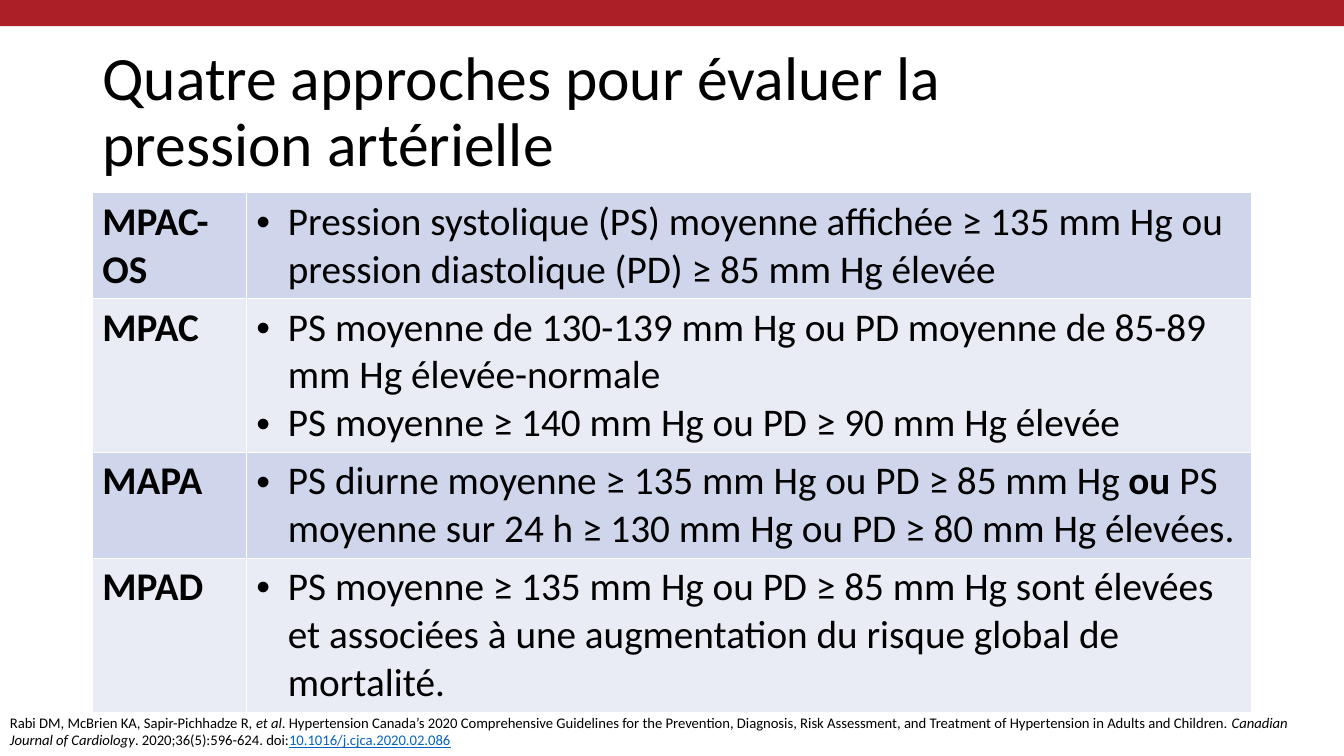
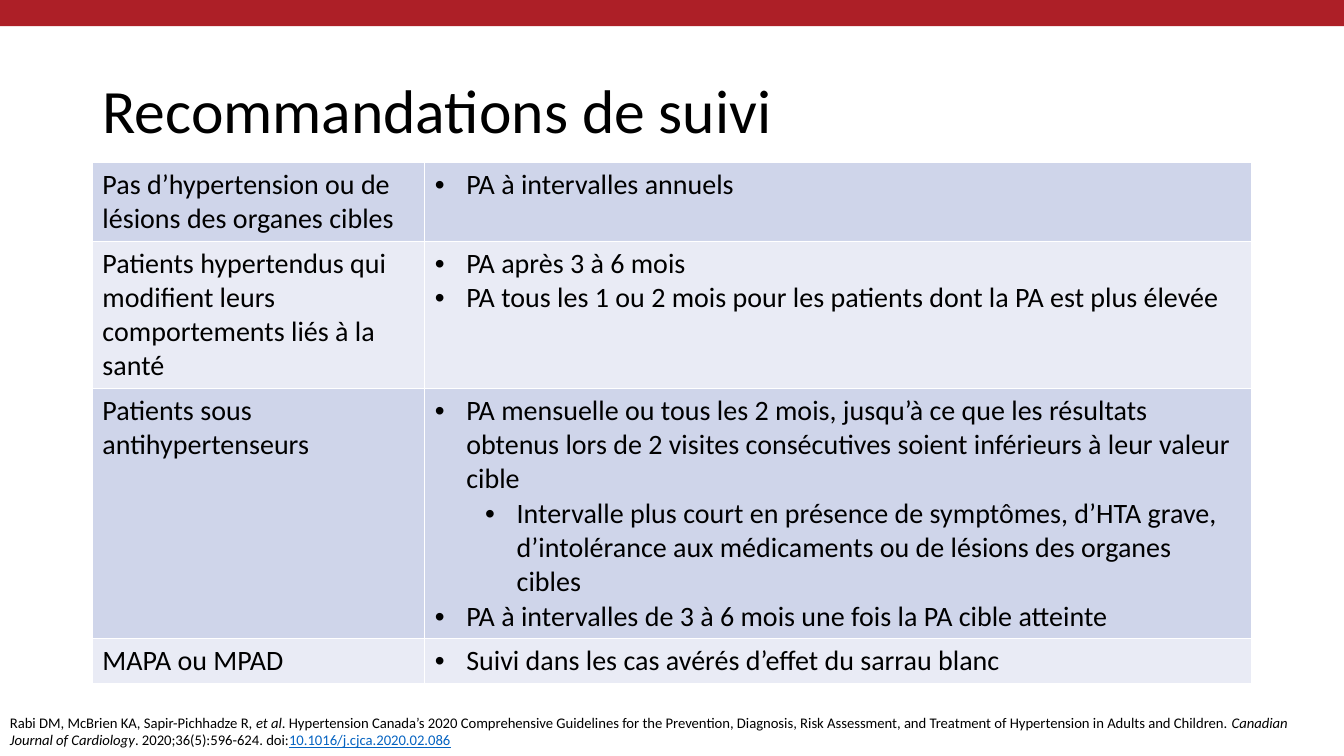
import dataclasses

import pptx
import pptx.dml.color
import pptx.enum.shapes
import pptx.enum.text
import pptx.oxml.ns
import pptx.oxml.xmlchemy
import pptx.util
import lxml.etree

Pt = pptx.util.Pt
qn = pptx.oxml.ns.qn


@dataclasses.dataclass(frozen=True)
class Theme:
    font: str = "Calibri"
    ink: str = "000000"
    red: str = "AD1F27"
    link: str = "0563C1"
    white: str = "FFFFFF"
    rows: tuple = ("CFD5EA", "E9EBF5")
    title: float = 44
    large: float = 28
    small: float = 20
    note: float = 10.5


THEME = Theme()
WIDE, HIGH = 960, 540
LEFT = 66
HANG, STEP = 22.5, 36

NOTE = (
    "Rabi DM, McBrien KA, Sapir-Pichhadze R, *et al*. Hypertension Canada’s 2020 "
    "Comprehensive Guidelines for the Prevention, Diagnosis, Risk Assessment, and "
    "Treatment of Hypertension in Adults and Children. *Canadian Journal of "
    "Cardiology*. 2020;36(5):596-624. doi:"
)
DOI = "10.1016/j.cjca.2020.02.086"

LIMITS = [
    ("*MPAC-OS*", [
        "Pression systolique (PS) moyenne affichée ≥ 135 mm Hg ou "
        "pression diastolique (PD) ≥ 85 mm Hg élevée",
    ]),
    ("*MPAC*", [
        "PS moyenne de 130-139 mm Hg ou PD moyenne de 85-89 mm Hg élevée-normale",
        "PS moyenne ≥ 140 mm Hg ou PD ≥ 90 mm Hg élevée",
    ]),
    ("*MAPA*", [
        "PS diurne moyenne ≥ 135 mm Hg ou PD ≥ 85 mm Hg *ou* PS moyenne "
        "sur 24 h ≥ 130 mm Hg ou PD ≥ 80 mm Hg élevées.",
    ]),
    ("*MPAD*", [
        "PS moyenne ≥ 135 mm Hg ou PD ≥ 85 mm Hg sont élevées et associées "
        "à une augmentation du risque global de mortalité.",
    ]),
]

VISITS = [
    ("Pas d’hypertension ou de lésions des organes cibles", [
        "PA à intervalles annuels",
    ]),
    ("Patients hypertendus qui modifient leurs comportements liés à la santé", [
        "PA après 3 à 6 mois",
        "PA tous les 1 ou 2 mois pour les patients dont la PA est plus élevée",
    ]),
    ("Patients sous antihypertenseurs", [
        "PA mensuelle ou tous les 2 mois, jusqu’à ce que les résultats obtenus "
        "lors de 2 visites consécutives soient inférieurs à leur valeur cible",
        "> Intervalle plus court en présence de symptômes, d’HTA grave, "
        "d’intolérance aux médicaments ou de lésions des organes cibles",
        "PA à intervalles de 3 à 6 mois une fois la PA cible atteinte",
    ]),
    ("MAPA ou MPAD", [
        "Suivi dans les cas avérés d’effet du sarrau blanc",
    ]),
]


def tint(code):
    return pptx.dml.color.RGBColor.from_string(code)


def style(run, size, color=THEME.ink):
    run.font.name = THEME.font
    run.font.size = Pt(size)
    run.font.color.rgb = tint(color)


def write(par, text, size, mark="bold"):
    for i, piece in enumerate(text.split("*")):
        if piece:
            run = par.add_run()
            run.text = piece
            style(run, size)
            setattr(run.font, mark, i % 2 == 1)


def bullet(par, level):
    par.level = level
    props = par._p.get_or_add_pPr()
    props.set("marL", str(Pt(HANG + STEP * level)))
    props.set("indent", str(-Pt(HANG)))
    lxml.etree.SubElement(props, qn("a:buFont")).set("typeface", "Arial")
    lxml.etree.SubElement(props, qn("a:buChar")).set("char", "•")


def border(cell):
    props = cell._tc.get_or_add_tcPr()
    for side in ("lnL", "lnR", "lnT", "lnB"):
        line = lxml.etree.SubElement(props, qn("a:" + side), w=str(Pt(1)))
        fill = lxml.etree.SubElement(line, qn("a:solidFill"))
        lxml.etree.SubElement(fill, qn("a:srgbClr"), val=THEME.white)


def add_band(deck, slide):
    band = slide.shapes.add_shape(
        pptx.enum.shapes.MSO_SHAPE.RECTANGLE, 0, Pt(-5.8), Pt(WIDE), Pt(24.5))
    band.shadow.inherit = False
    band.fill.solid()
    band.fill.fore_color.rgb = tint(THEME.red)
    band.line.fill.background()
    deck.slide_master.shapes.element.insert(2, band._element)


def add_title(slide, text):
    title = slide.shapes.title
    title.left, title.top = Pt(LEFT), Pt(29)
    title.width, title.height = Pt(742), Pt(104.4)
    frame = title.text_frame
    frame.text = text
    frame.word_wrap = True
    frame.auto_size = pptx.enum.text.MSO_AUTO_SIZE.NONE
    frame.vertical_anchor = pptx.enum.text.MSO_ANCHOR.MIDDLE
    par = frame.paragraphs[0]
    par.alignment = pptx.enum.text.PP_ALIGN.LEFT
    par.line_spacing = 0.9
    style(par.runs[0], THEME.title)


def add_grid(slide, top, widths, rows, size):
    grid = slide.shapes.add_table(
        len(rows), 2, Pt(LEFT), Pt(top), Pt(sum(widths)), Pt(30 * len(rows))).table
    grid.first_row = grid.horz_banding = False
    for column, width in zip(grid.columns, widths):
        column.width = Pt(width)
    for i, (label, items) in enumerate(rows):
        head, body = grid.cell(i, 0), grid.cell(i, 1)
        write(head.text_frame.paragraphs[0], label, size)
        frame = body.text_frame
        for j, item in enumerate(items):
            par = frame.add_paragraph() if j else frame.paragraphs[0]
            bullet(par, int(item.startswith("> ")))
            write(par, item.removeprefix("> "), size)
        for cell in (head, body):
            border(cell)
            cell.fill.solid()
            cell.fill.fore_color.rgb = tint(THEME.rows[i % 2])


def add_note(slide):
    frame = slide.shapes.add_textbox(0, Pt(506), Pt(WIDE), Pt(32.4)).text_frame
    frame.word_wrap = True
    frame.auto_size = pptx.enum.text.MSO_AUTO_SIZE.SHAPE_TO_FIT_TEXT
    par = frame.paragraphs[0]
    write(par, NOTE, THEME.note, "italic")
    run = par.add_run()
    run.text = DOI
    style(run, THEME.note, THEME.link)
    run.font.underline = True


def add_page(deck, title, top, widths, rows, size):
    slide = deck.slides.add_slide(deck.slide_layouts[5])
    add_title(slide, title)
    add_grid(slide, top, widths, rows, size)
    add_note(slide)
    return slide


def main():
    deck = pptx.Presentation()
    deck.slide_width, deck.slide_height = Pt(WIDE), Pt(HIGH)
    first = add_page(deck, "Quatre approches pour évaluer la pression artérielle",
                     137.7, (110, 718), LIMITS, THEME.large)
    add_page(deck, "Recommandations de suivi",
             116.2, (237.4, 590.6), VISITS, THEME.small)
    add_band(deck, first)
    deck.save("out.pptx")


if __name__ == "__main__":
    main()
